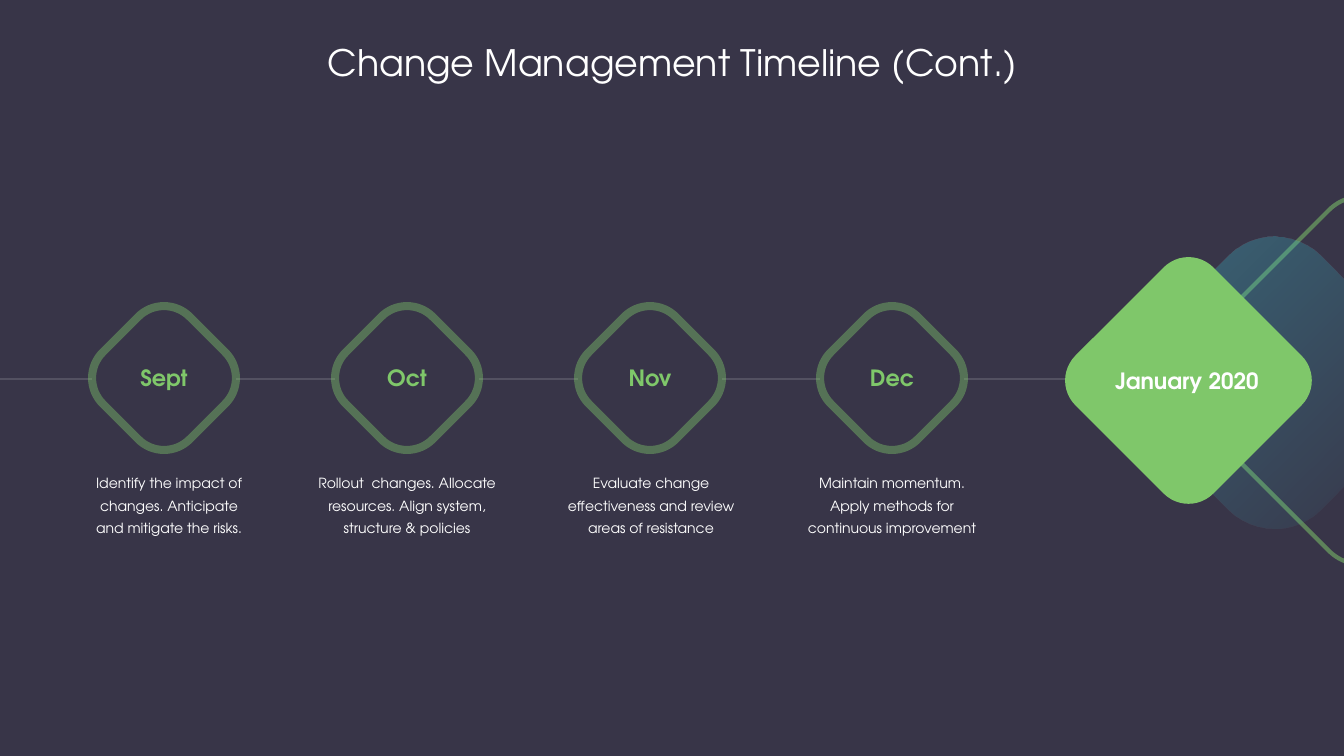
from lxml.etree import SubElement
from pptx import Presentation
from pptx.dml.color import RGBColor
from pptx.enum.shapes import MSO_CONNECTOR, MSO_SHAPE
from pptx.enum.text import MSO_ANCHOR, MSO_AUTO_SIZE, PP_ALIGN
from pptx.oxml.ns import qn
from pptx.util import Pt

TITLE = "Change Management Timeline (Cont.)"
GOAL = "January 2020"
MONTHS = [
    ("Sept", 164, 169, 183, "Identify the impact of changes. Anticipate and mitigate the risks."),
    ("Oct", 407, 407, 218, "Rollout  changes. Allocate resources. Align system, structure & policies"),
    ("Nov", 650, 651, 191, "Evaluate change effectiveness and review areas of resistance"),
    ("Dec", 892, 892, 207, "Maintain momentum. Apply methods for continuous improvement"),
]
FONT = "TeX Gyre Adventor"
DARK, GREEN, CYAN, WHITE = "383548", "7FC76A", "3DCADA", "FFFFFF"
SCALE = 914400 / 100.8
AXIS = 378
HALF_DIAMOND, BEND_DEPTH, BEND_REACH = 72, 11, 26
TIP_RATIO, CURVE_RATIO = 2.41, 0.55


def px(length):
    return round(length * SCALE)


def rgb(value):
    return RGBColor.from_string(value)


def fade(element, percent):
    color = next(element.iter(qn("a:srgbClr")))
    SubElement(color, qn("a:alpha"), val=str(percent * 1000))


def outline(shape, color, width, percent):
    shape.line.color.rgb = rgb(color)
    shape.line.width = Pt(width)
    fade(shape.element.spPr.find(qn("a:ln")), percent)


def write(shape, text, size, color=WHITE, bold=False, anchor=MSO_ANCHOR.MIDDLE,
          spacing=None, wrap=True):
    frame = shape.text_frame
    frame.text = text
    frame.word_wrap = wrap
    frame.auto_size = MSO_AUTO_SIZE.NONE
    frame.vertical_anchor = anchor
    para = frame.paragraphs[0]
    para.alignment = PP_ALIGN.CENTER
    if spacing:
        para.line_spacing = Pt(spacing)
    para.font.name = FONT
    para.font.size = Pt(size)
    para.font.bold = bold
    para.font.color.rgb = rgb(color)


def add_tilted_square(left, top, side, rotation, rounding):
    shape = page.shapes.add_shape(
        MSO_SHAPE.ROUNDED_RECTANGLE, px(left), px(top), px(side), px(side))
    shape.adjustments[0] = rounding
    shape.rotation = rotation
    shape.shadow.inherit = False
    shape.line.fill.background()
    return shape


def bend(start, peak, end):
    controls = []
    for near in (start, end):
        control = []
        for axis_index in (0, 1):
            middle = (start[axis_index] + end[axis_index]) / 2
            tip = middle + TIP_RATIO * (peak[axis_index] - middle)
            control.append(near[axis_index] + CURVE_RATIO * (tip - near[axis_index]))
        controls.append(control)
    return [*controls, end]


def round_corners(shape):
    outline_path = next(shape.element.iter(qn("a:path")))
    steps = list(outline_path)[:12]
    spots = [(int(step[0].get("x")), int(step[0].get("y"))) for step in steps]
    for first in range(0, 12, 3):
        curve = SubElement(outline_path, qn("a:cubicBezTo"))
        for x, y in bend(*spots[first:first + 3]):
            SubElement(curve, qn("a:pt"), x=str(round(x)), y=str(round(y)))
        outline_path.replace(steps[first + 1], curve)
        outline_path.remove(steps[first + 2])


def add_rounded_diamond(center_x, center_y):
    inner = HALF_DIAMOND - BEND_DEPTH
    points = []
    for out_x, out_y in ((0, -1), (1, 0), (0, 1), (-1, 0)):
        for out, side in ((inner, -BEND_REACH), (HALF_DIAMOND, 0), (inner, BEND_REACH)):
            points.append((px(center_x + out * out_x - side * out_y),
                           px(center_y + out * out_y + side * out_x)))
    builder = page.shapes.build_freeform(*points[0])
    builder.add_line_segments(points[1:], close=True)
    shape = builder.convert_to_shape()
    shape.shadow.inherit = False
    round_corners(shape)
    return shape


def add_text_box(left, top, width, height):
    return page.shapes.add_textbox(px(left), px(top), px(width), px(height))


deck = Presentation()
deck.slide_width, deck.slide_height = px(1344), px(756)
page = deck.slides.add_slide(deck.slide_layouts[5])
page.background.fill.solid()
page.background.fill.fore_color.rgb = rgb(DARK)

title = page.shapes.title
title.left, title.top, title.width, title.height = px(314), px(35), px(717), px(54)
write(title, TITLE, 26, anchor=MSO_ANCHOR.TOP, wrap=False)

frame_square = add_tilted_square(1218, 237, 287, 45, 0.16)
frame_square.fill.background()
outline(frame_square, GREEN, 3, 52)

axis = page.shapes.add_connector(
    MSO_CONNECTOR.STRAIGHT, px(-6), px(AXIS + 1), px(1069), px(AXIS + 1))
outline(axis, WHITE, 1, 21)
SubElement(axis.element.spPr, qn("a:effectLst"))

for month, center, text_center, width, description in MONTHS:
    diamond = add_rounded_diamond(center, AXIS)
    diamond.fill.solid()
    diamond.fill.fore_color.rgb = rgb(DARK)
    outline(diamond, GREEN, 5.75, 41)
    write(diamond, month, 16, GREEN, bold=True)
    box = add_text_box(text_center - width / 2, 465, width, 76)
    write(box, description, 10, spacing=16)

glow = add_tilted_square(1152, 260, 245, 225, 0.265)
glow.fill.gradient()
glow.fill.gradient_angle = 0
for stop, position in zip(glow.fill.gradient_stops, (0, 1)):
    stop.position = position
    stop.color.rgb = rgb(CYAN)
for stop_element, percent in zip(glow.element.spPr.iter(qn("a:gs")), (0, 34)):
    fade(stop_element, percent)

goal = add_tilted_square(1091, 283, 195, 45, 0.18)
goal.fill.solid()
goal.fill.fore_color.rgb = rgb(GREEN)
goal_label = add_text_box(1104, 362, 166, 39)
write(goal_label, GOAL, 16, bold=True, anchor=MSO_ANCHOR.TOP)
page.shapes.add_group_shape([goal, goal_label])

deck.save("out.pptx")
